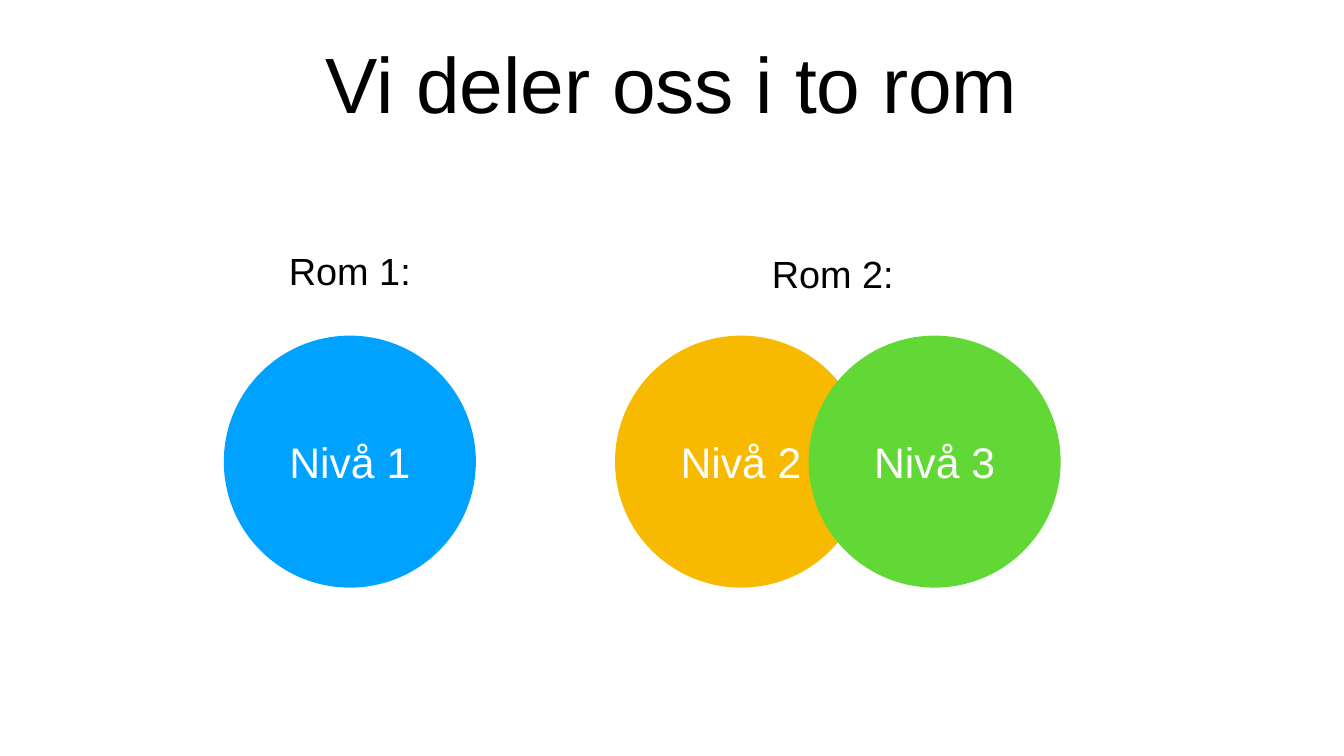
import pptx
import pptx.dml.color
import pptx.enum.shapes
import pptx.enum.text
import pptx.util

Inches = pptx.util.Inches
COLORS = {
    "text": "000000",
    "light": "FFFFFF",
    "blue": "00A2FF",
    "yellow": "F7BA01",
    "green": "61D836",
}


def rgb(name):
    return pptx.dml.color.RGBColor.from_string(COLORS[name])


class SlideBuilder:
    """Holds the current slide and the text style shared by its elements."""

    def __init__(self, slide, font="Arial"):
        self.s = slide
        self.font = font

    def add_text(self, sp, text, size, color, inset):
        """Put one centred run in a shape, with equal insets in inches."""
        tf = sp.text_frame
        tf.word_wrap = True
        tf.auto_size = pptx.enum.text.MSO_AUTO_SIZE.NONE
        tf.vertical_anchor = pptx.enum.text.MSO_ANCHOR.MIDDLE
        tf.margin_left = tf.margin_right = Inches(inset)
        tf.margin_top = tf.margin_bottom = Inches(inset)
        p = tf.paragraphs[0]
        p.alignment = pptx.enum.text.PP_ALIGN.CENTER
        r = p.add_run()
        r.text = text
        r.font.name = self.font
        r.font.size = pptx.util.Pt(size)
        r.font.color.rgb = rgb(color)

    def title(self, text, left, top, width, height):
        sp = self.s.shapes.title
        sp.left, sp.top = Inches(left), Inches(top)
        sp.width, sp.height = Inches(width), Inches(height)
        self.add_text(sp, text, 56, "text", 0.06)

    def label(self, text, left, top):
        sp = self.s.shapes.add_textbox(
            Inches(left), Inches(top), Inches(3.22), Inches(1.25))
        self.add_text(sp, text, 27, "text", 0.03)

    def circle(self, text, left, color, top=3.33, diameter=2.5):
        sp = self.s.shapes.add_shape(
            pptx.enum.shapes.MSO_SHAPE.OVAL,
            Inches(left), Inches(top), Inches(diameter), Inches(diameter))
        sp.shadow.inherit = False
        sp.fill.solid()
        sp.fill.fore_color.rgb = rgb(color)
        sp.line.fill.background()
        self.add_text(sp, text, 30.5, "light", 0)


def main():
    prs = pptx.Presentation()
    prs.slide_width, prs.slide_height = Inches(13.33), Inches(7.5)
    title_only = prs.slide_layouts[5]
    builder = SlideBuilder(prs.slides.add_slide(title_only))

    builder.title("Vi deler oss i to rom", 0.92, 0.19, 11.49, 1.25)
    builder.label("Rom 1:", 1.86, 2.06)
    builder.label("Rom 2:", 6.65, 2.09)
    levels = [(2.22, "blue"), (6.1, "yellow"), (8.02, "green")]
    for level, (left, color) in enumerate(levels, start=1):
        builder.circle(f"Nivå {level}", left, color)

    prs.save("out.pptx")


if __name__ == "__main__":
    main()
